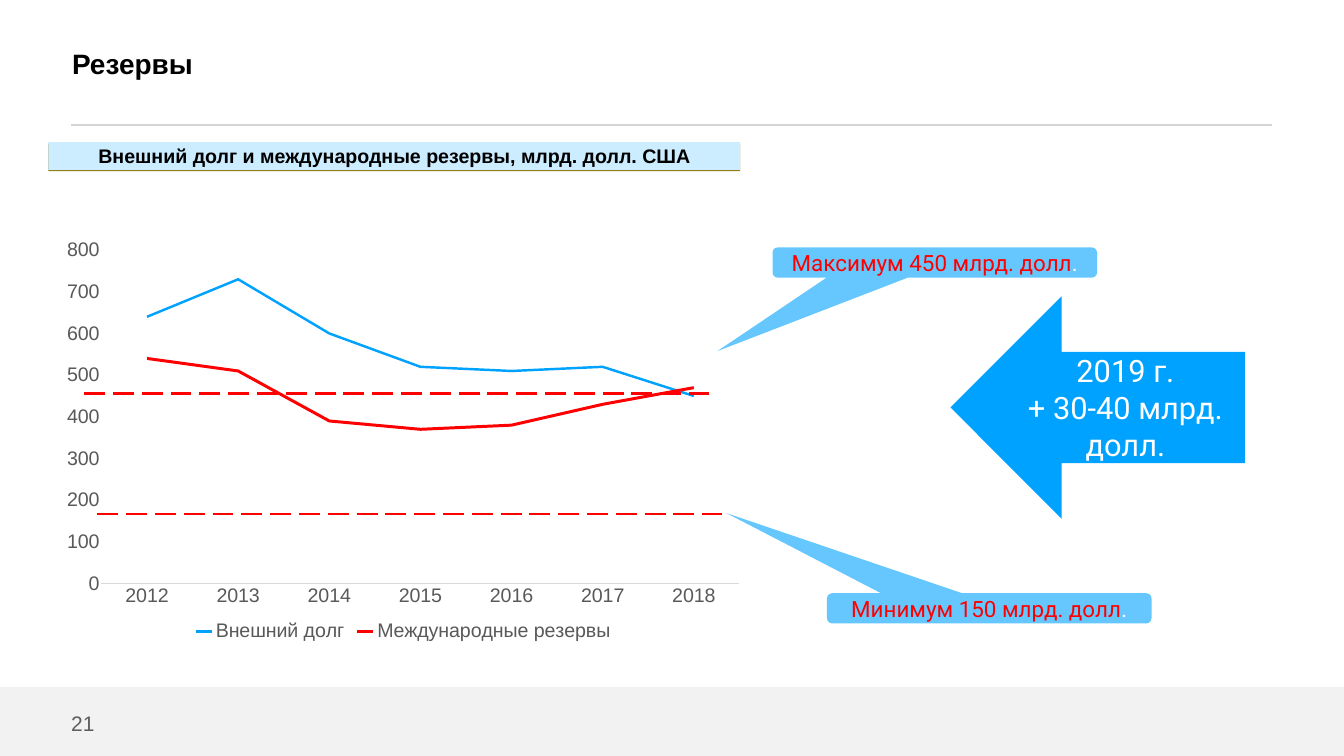
from lxml import etree
from pptx import Presentation
from pptx.chart.data import CategoryChartData
from pptx.dml.color import RGBColor
from pptx.enum.chart import XL_CHART_TYPE, XL_LEGEND_POSITION, XL_TICK_MARK
from pptx.enum.dml import MSO_LINE
from pptx.enum.shapes import MSO_CONNECTOR, MSO_SHAPE
from pptx.enum.text import MSO_ANCHOR, PP_ALIGN
from pptx.oxml import parse_xml
from pptx.oxml.ns import nsdecls, qn
from pptx.util import Inches, Pt

RECTANGLE = MSO_SHAPE.RECTANGLE
CALLOUT = MSO_SHAPE.ROUNDED_RECTANGULAR_CALLOUT
LEFT_ARROW = MSO_SHAPE.LEFT_ARROW
STRAIGHT = MSO_CONNECTOR.STRAIGHT
LONG_DASH = MSO_LINE.LONG_DASH
MIDDLE = MSO_ANCHOR.MIDDLE
LEFT, CENTER = PP_ALIGN.LEFT, PP_ALIGN.CENTER
NO_TICK = XL_TICK_MARK.NONE

COLORS = {
    "black": "000000", "white": "FFFFFF", "red": "FF0000", "blue": "00A2FF",
    "callout": "66C7FF", "banner": "CCECFF", "banner shadow": "947C18",
    "footer": "F2F2F2", "rule": "D5D5D5", "number": "5E5E5E",
    "axis text": "595959", "axis line": "D9D9D9",
}
COLORS = {name: RGBColor.from_string(value) for name, value in COLORS.items()}

presentation = Presentation()
presentation.slide_width, presentation.slide_height = Inches(26.67), Inches(15)
slide = presentation.slides.add_slide(presentation.slide_layouts[6])
COLUMN = presentation.slide_width / 100
ROW = presentation.slide_height / 100


def grid(left, top, width, height):
    return [round(n * unit) for n, unit in zip((left, top, width, height), (COLUMN, ROW) * 2)]


def write(shape, lines, size, font_name, align, bold=False, wrap=True):
    frame_format = {"word_wrap": wrap, "vertical_anchor": MIDDLE, "margin_left": 0,
                    "margin_right": 0, "margin_top": 0, "margin_bottom": 0}
    for name, value in frame_format.items():
        setattr(shape.text_frame, name, value)
    for index, runs in enumerate(lines):
        paragraph = shape.text_frame.paragraphs[0] if index == 0 else shape.text_frame.add_paragraph()
        paragraph.alignment = align
        for text, color in runs:
            run = paragraph.add_run()
            run.text = text
            for name, value in {"size": Pt(size), "name": font_name, "bold": bold}.items():
                setattr(run.font, name, value)
            run.font.color.rgb = COLORS[color]


footer = slide.shapes.add_shape(RECTANGLE, *grid(0, 90.87, 100, 9.13))
title = slide.shapes.add_textbox(*grid(5.36, 0, 75.52, 16.67))
write(title, [[("Резервы", "black")]], 40, "Arial", LEFT, bold=True)
number = slide.shapes.add_textbox(*grid(5.29, 94, 1.91, 3.33))
write(number, [[("21", "number")]], 30, "Arial", LEFT, wrap=False)

chart_data = CategoryChartData(number_format="#,##0")
chart_data.categories = [str(year) for year in range(2012, 2019)]
chart_data.add_series("Внешний долг", [640, 730, 600, 520, 510, 520, 450])
chart_data.add_series("Международные резервы", [540, 510, 390, 370, 380, 430, 470])
chart = slide.shapes.add_chart(
    XL_CHART_TYPE.LINE, *grid(3.9, 30.33, 52.16, 55.13), chart_data).chart
chart.has_title = False
chart.has_legend = True
for name, value in {"position": XL_LEGEND_POSITION.BOTTOM, "include_in_layout": False}.items():
    setattr(chart.legend, name, value)
category_axis, value_axis = chart.category_axis, chart.value_axis
value_format = {"minimum_scale": 0, "maximum_scale": 800, "major_unit": 100,
                "has_major_gridlines": False}
for name, value in value_format.items():
    setattr(value_axis, name, value)
for axis in (category_axis, value_axis):
    axis.major_tick_mark = axis.minor_tick_mark = NO_TICK
for font in (category_axis.tick_labels.font, value_axis.tick_labels.font, chart.legend.font):
    for name, value in {"size": Pt(28), "name": "Arial"}.items():
        setattr(font, name, value)
    font.color.rgb = COLORS["axis text"]
category_axis.format.line.color.rgb = COLORS["axis line"]
category_axis.format.line.width = Pt(0.75)
value_axis.format.line.fill.background()
value_axis.tick_labels.number_format = "#,##0"
value_axis.tick_labels.number_format_is_linked = False
chart.plots[0].vary_by_categories = False
for series, color, width in zip(chart.plots[0].series, ("blue", "red"), (3.5, 4.25)):
    series.smooth = False
    series.format.line.color.rgb = COLORS[color]
    series.format.line.width = Pt(width)

plot_area = chart.plots[0]._element.getparent()
for old_layout in plot_area.findall(qn("c:layout")):
    plot_area.remove(old_layout)
layout = parse_xml(f"<c:layout {nsdecls('c')}><c:manualLayout/></c:layout>")
layout_values = {"layoutTarget": "inner", "xMode": "edge", "yMode": "edge",
                 "x": 0.07, "y": 0.05, "w": 0.91, "h": 0.8}
for name, value in layout_values.items():
    etree.SubElement(layout[0], qn(f"c:{name}")).set("val", str(value))
plot_area.insert(0, layout)

banner = slide.shapes.add_shape(RECTANGLE, *grid(3.6, 18.8, 51.48, 3.67))
write(banner, [[("Внешний долг и международные резервы, млрд. долл. США", "black")]],
      28, "Arial", CENTER, bold=True)

for left, right, row, color, width, dash in [
    (5.29, 94.68, 16.53, "rule", 3, None),
    (7.24, 53.73, 68, "red", 3.75, LONG_DASH),
    (6.26, 52.79, 52.07, "red", 3.75, LONG_DASH),
]:
    start_x, start_y, end_x, end_y = grid(left, row, right, row)
    connector = slide.shapes.add_connector(STRAIGHT, start_x, start_y, end_x, end_y)
    connector.line.color.rgb = COLORS[color]
    connector.line.width = Pt(width)
    connector.line.dash_style = dash
    etree.SubElement(connector._element.spPr, qn("a:effectLst"))

filled_shapes = [(footer, "footer"), (banner, "banner")]
for left, top, text, tip in [
    (57.48, 32.73, "Максимум 450 млрд. долл", (-0.67, 2.93)),
    (61.53, 78.47, "Минимум 150 млрд. долл", (-0.81, -3.15)),
]:
    callout = slide.shapes.add_shape(CALLOUT, *grid(left, top, 24.15, 4))
    for index, value in enumerate((*tip, 0.17)):
        callout.adjustments[index] = value
    write(callout, [[(text, "red"), (".", "white")]], 32, "Roboto", CENTER)
    filled_shapes.append((callout, "callout"))

arrow = slide.shapes.add_shape(LEFT_ARROW, *grid(70.72, 39.2, 21.9, 29.4))
write(arrow, [[("2019 г.", "white")], [("+ 30-40 млрд. долл.", "white")]], 44, "Roboto", CENTER)
filled_shapes.append((arrow, "blue"))

for shape, color in filled_shapes:
    shape.shadow.inherit = False
    shape.fill.solid()
    shape.fill.fore_color.rgb = COLORS[color]
    shape.line.fill.background()

effects = banner._element.spPr.find(qn("a:effectLst"))
effects.append(parse_xml(
    f'<a:outerShdw {nsdecls("a")} blurRad="0" dist="{Pt(2)}" dir="5400000" rotWithShape="0">'
    f'<a:srgbClr val="{COLORS["banner shadow"]}"/></a:outerShdw>'))

presentation.save("out.pptx")
